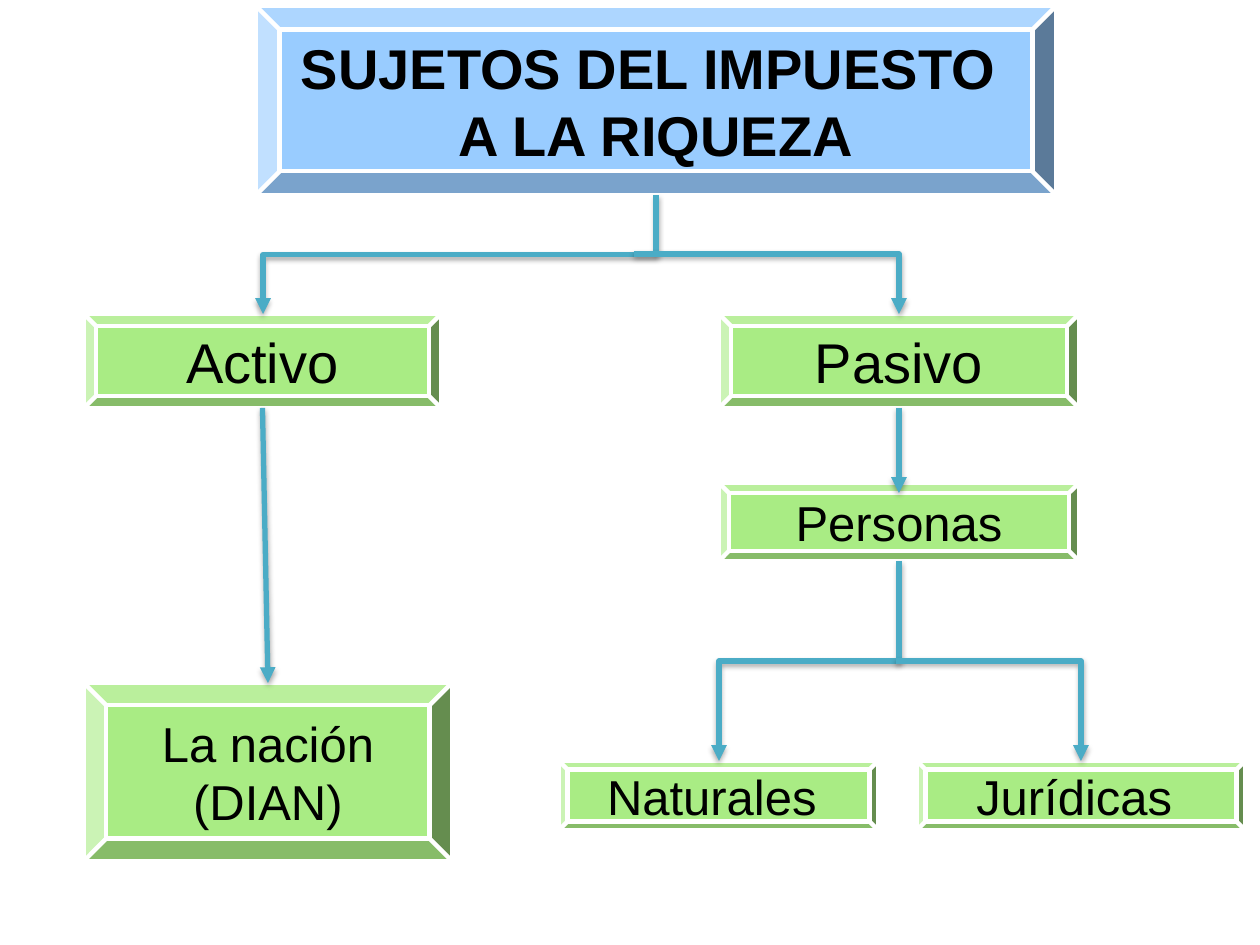
from lxml.etree import SubElement
from pptx import Presentation
from pptx.dml.color import RGBColor
from pptx.enum.shapes import MSO_CONNECTOR as Link, MSO_SHAPE as Shape
from pptx.enum.text import MSO_ANCHOR as Anchor, PP_ALIGN as Align
from pptx.oxml import parse_xml
from pptx.oxml.ns import qn
from pptx.util import Emu, Pt

EMU_PER_PX = 914400 / 126
GREEN, BLUE, TEAL = "A9EC84", "99CCFF", "4BACC6"
SHADOW = (
    '<a:effectLst xmlns:a="http://schemas.openxmlformats.org/drawingml/2006/main">'
    '<a:outerShdw blurRad="40000" dist="23000" dir="5400000" rotWithShape="0">'
    '<a:srgbClr val="000000"><a:alpha val="35000"/></a:srgbClr>'
    "</a:outerShdw></a:effectLst>"
)


def px(*lengths):
    return [Emu(round(n * EMU_PER_PX)) for n in lengths]


def write(shape, text, size=28, bold=False, color="000000"):
    frame = shape.text_frame
    frame.word_wrap = False
    frame.vertical_anchor = Anchor.MIDDLE
    frame.text = text
    for paragraph in frame.paragraphs:
        paragraph.alignment = Align.CENTER
        font = paragraph.font
        font.name, font.size, font.bold = "Arial", Pt(size), bold
        font.color.rgb = RGBColor.from_string(color)


prs = Presentation()
prs.slide_width, prs.slide_height = px(1260, 945)
slide = prs.slides.add_slide(prs.slide_layouts[6])

# Bevelled boxes: text, left, top, width, height, fill, text format
boxes = [
    ("SUJETOS DEL IMPUESTO \nA LA RIQUEZA", 256, 6, 800, 189, BLUE, {"size": 32, "bold": True}),
    ("Jurídicas ", 917, 761, 328, 69, GREEN, {}),
    ("Naturales ", 559, 761, 319, 69, GREEN, {}),
    ("Pasivo", 719, 314, 360, 94, GREEN, {"size": 32}),
    ("Activo", 84, 314, 357, 94, GREEN, {"size": 32}),
    ("La nación\n(DIAN)", 84, 683, 368, 178, GREEN, {}),
    ("Personas", 719, 483, 360, 78, GREEN, {}),
]
nodes = []
for text, left, top, width, height, fill, style in boxes:
    node = slide.shapes.add_shape(Shape.BEVEL, *px(left, top, width, height))
    node.shadow.inherit = False
    node.fill.solid()
    node.fill.fore_color.rgb = RGBColor.from_string(fill)
    node.line.color.rgb = RGBColor.from_string("FFFFFF")
    node.line.width = Pt(2.5)
    write(node, text, **style)
    nodes.append(node)
title, juridicas, naturales, pasivo, activo, nacion, personas = nodes

arrows = []

# Left branches go down, across and down: a bent connector turned by 90 degrees
for x1, y1, x2, y2 in [(656, 195, 263, 314), (899, 561, 719, 761)]:
    mid_x, mid_y = (x1 + x2) / 2, (y1 + y2) / 2
    half_w, half_h = (y2 - y1) / 2, (x1 - x2) / 2
    branch = slide.shapes.add_connector(
        Link.ELBOW, *px(mid_x - half_w, mid_y - half_h, mid_x + half_w, mid_y + half_h))
    branch.element.spPr.find(qn("a:xfrm")).set("rot", "5400000")
    arrows.append(branch)

# Right branches go across and down
for ends in [(634, 254, 899, 314), (896, 661, 1081, 761)]:
    branch = slide.shapes.add_connector(Link.ELBOW, *px(*ends))
    branch.element.spPr.find(qn("a:prstGeom")).set("prst", "bentConnector2")
    arrows.append(branch)

to_nacion = slide.shapes.add_connector(Link.STRAIGHT, *px(263, 408, 268, 683))
to_nacion.begin_connect(activo, 2)
to_nacion.end_connect(nacion, 0)

# This arrowhead reaches a little way into the box
to_personas = slide.shapes.add_connector(Link.STRAIGHT, *px(899, 408, 899, 493))
to_personas.begin_connect(pasivo, 2)
arrows += [to_nacion, to_personas]

for arrow in arrows:
    arrow.line.color.rgb = RGBColor.from_string(TEAL)
    arrow.line.width = Pt(3)
    SubElement(arrow.line._get_or_add_ln(), qn("a:tailEnd"), type="triangle")
    arrow.element.spPr.append(parse_xml(SHADOW))

prs.save("out.pptx")
